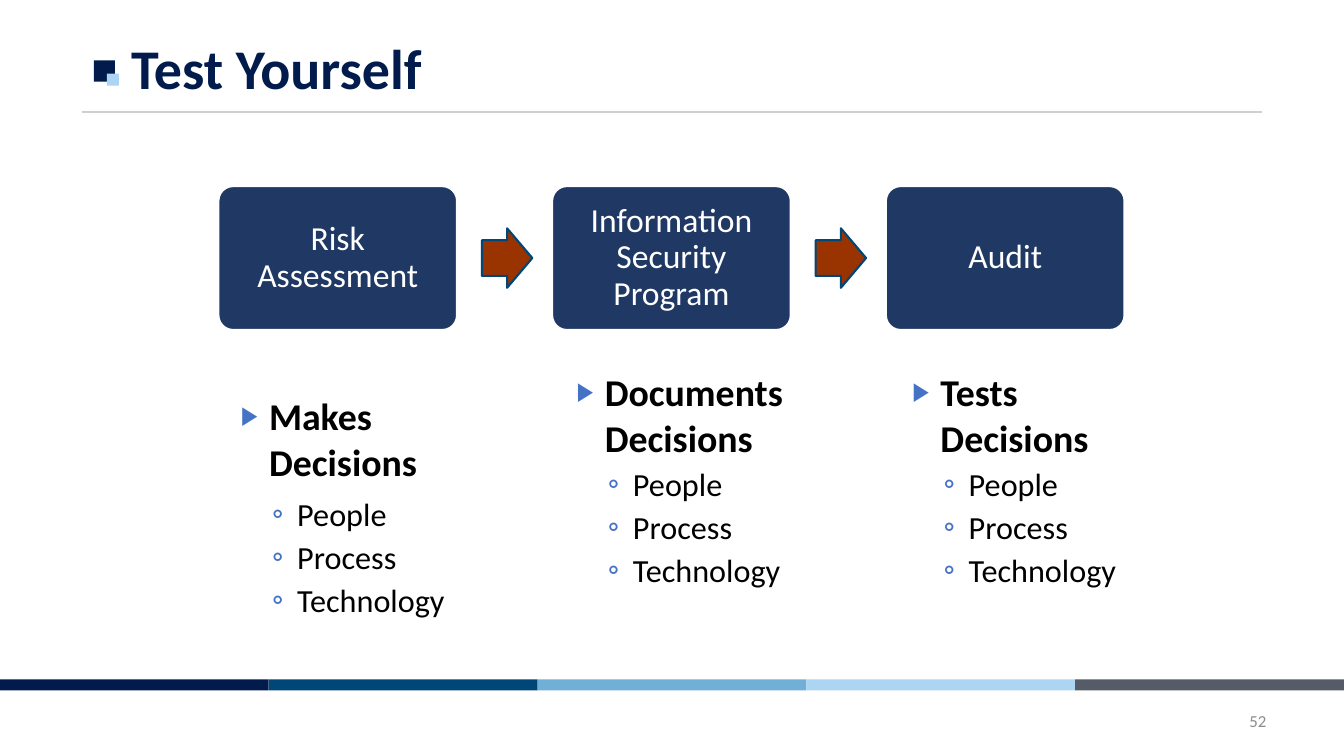
import pptx
import pptx.util
import pptx.dml.color
import pptx.enum.shapes
import pptx.enum.text
import pptx.oxml.ns
import lxml.etree

Inches = pptx.util.Inches
Pt = pptx.util.Pt
RGB = pptx.dml.color.RGBColor
SHAPE = pptx.enum.shapes.MSO_SHAPE
ALIGN = pptx.enum.text.PP_ALIGN
ANCHOR = pptx.enum.text.MSO_ANCHOR
qn = pptx.oxml.ns.qn

TITLE = "Test Yourself"
PAGE = "52"
ASPECTS = ["People", "Process", "Technology"]
STEPS = [
    {"name": "Risk Assessment", "action": "Makes\vDecisions", "top": 3.85, "after": 4},
    {"name": "Information Security Program", "action": "Documents\vDecisions", "top": 3.61, "after": 0},
    {"name": "Audit", "action": "Tests\vDecisions", "top": 3.61, "after": 0},
]

NAVY = RGB(0x00, 0x1B, 0x4C)
BLUE = RGB(0x00, 0x47, 0x78)
SKY = RGB(0x71, 0xAF, 0xD6)
PALE = RGB(0xAC, 0xD5, 0xF3)
SLATE = RGB(0x55, 0x5C, 0x67)
BOX = RGB(0x20, 0x38, 0x64)
RUST = RGB(0x99, 0x33, 0x00)
BULLET = RGB(0x44, 0x72, 0xC4)
RULE = RGB(0xD0, 0xCE, 0xCE)
GREY = RGB(0x8C, 0x8C, 0x8C)
WHITE = RGB(0xFF, 0xFF, 0xFF)
BLACK = RGB(0x00, 0x00, 0x00)
STRIPES = [NAVY, BLUE, SKY, PALE, SLATE]

SLIDE_W = 13.33
BOX_LEFT, BOX_TOP, BOX_W, BOX_H = 2.17, 1.85, 2.36, 1.42
BOX_STEP = 3.31
ARROW_W, ARROW_H, ARROW_OFFSET = 0.5, 0.59, 2.61
LIST_STEP, LIST_W, LIST_H = 3.33, 2.83, 2.4


def add_bullet(p, char, indent, hanging, percent):
    pPr = p._p.get_or_add_pPr()
    pPr.set("marL", str(Inches(indent)))
    pPr.set("indent", str(-Inches(hanging)))
    color = lxml.etree.SubElement(pPr, qn("a:buClr"))
    lxml.etree.SubElement(color, qn("a:srgbClr")).set("val", str(BULLET))
    lxml.etree.SubElement(pPr, qn("a:buSzPct")).set("val", str(percent * 1000))
    lxml.etree.SubElement(pPr, qn("a:buFont")).set("typeface", "Calibri")
    lxml.etree.SubElement(pPr, qn("a:buChar")).set("char", char)


def add_text(tf, text, size=24, color=BLACK, bold=False, align=ALIGN.LEFT,
             spacing=None, before=0, after=0, bullet=None, level=0):
    p = tf.paragraphs[0]
    if p.text:
        p = tf.add_paragraph()
    if bullet:
        add_bullet(p, *bullet)
    p.text = text
    p.level = level
    p.alignment = align
    p.line_spacing = spacing
    p.space_before = Pt(before)
    p.space_after = Pt(after)
    for r in p.runs:
        r.font.name = "Calibri"
        r.font.size = Pt(size)
        r.font.bold = bold
        r.font.color.rgb = color


def add_box(s, kind, left, top, width, height, fill, line=None, weight=1):
    sp = s.shapes.add_shape(kind, Inches(left), Inches(top), Inches(width), Inches(height))
    sp.shadow.inherit = False
    sp.fill.solid()
    sp.fill.fore_color.rgb = fill
    if line is None:
        sp.line.fill.background()
    else:
        sp.line.color.rgb = line
        sp.line.width = Pt(weight)
    return sp


def add_textbox(s, left, top, width, height):
    tf = s.shapes.add_textbox(Inches(left), Inches(top), Inches(width), Inches(height)).text_frame
    tf.word_wrap = True
    return tf


def add_frame(s):
    stripe_w = SLIDE_W / len(STRIPES)
    for i, color in enumerate(STRIPES):
        add_box(s, SHAPE.RECTANGLE, i * stripe_w, 6.74, stripe_w, 0.11, color)
    rule = s.shapes.add_connector(pptx.enum.shapes.MSO_CONNECTOR.STRAIGHT,
                                  Inches(0.81), Inches(1.11), Inches(12.52), Inches(1.11))
    rule.line.color.rgb = RULE
    rule.line.width = Pt(1.5)
    lxml.etree.SubElement(rule._element.spPr, qn("a:effectLst"))
    add_box(s, SHAPE.RECTANGLE, 0.93, 0.6, 0.21, 0.21, NAVY)
    add_box(s, SHAPE.RECTANGLE, 1.06, 0.73, 0.12, 0.12, PALE)

    title = s.shapes.title
    title.left, title.top = Inches(1.2), Inches(0.31)
    title.width, title.height = Inches(9.99), Inches(0.79)
    title.text_frame.vertical_anchor = ANCHOR.MIDDLE
    add_text(title.text_frame, TITLE, size=40, color=NAVY, bold=True, spacing=0.9)

    tf = add_textbox(s, 9.66, 6.95, 3, 0.4)
    tf.vertical_anchor = ANCHOR.MIDDLE
    add_text(tf, PAGE, size=12, color=GREY, align=ALIGN.RIGHT)


def add_step(s, i, step):
    left = BOX_LEFT + i * BOX_STEP
    box = add_box(s, SHAPE.ROUNDED_RECTANGLE, left, BOX_TOP, BOX_W, BOX_H, BOX, WHITE)
    box.adjustments[0] = 0.1
    tf = box.text_frame
    tf.word_wrap = True
    tf.vertical_anchor = ANCHOR.MIDDLE
    tf.margin_left = tf.margin_right = tf.margin_top = tf.margin_bottom = Inches(0.1)
    add_text(tf, step["name"], color=WHITE, align=ALIGN.CENTER, spacing=0.9)

    if i < len(STEPS) - 1:
        arrow_top = BOX_TOP + (BOX_H - ARROW_H) / 2
        arrow = add_box(s, SHAPE.RIGHT_ARROW, left + ARROW_OFFSET, arrow_top,
                        ARROW_W, ARROW_H, RUST, BLUE, 1.5)
        arrow.adjustments[0] = 0.6
        arrow.adjustments[1] = 0.5

    tf = add_textbox(s, BOX_LEFT + i * LIST_STEP, step["top"], LIST_W, LIST_H)
    add_text(tf, step["action"], size=27, bold=True, after=step["after"],
             bullet=("▶", 0.4, 0.28, 68))
    for aspect in ASPECTS:
        add_text(tf, aspect, size=23, before=3.2, bullet=("◦", 0.68, 0.25, 100), level=1)


def main():
    prs = pptx.Presentation()
    prs.slide_width = Inches(SLIDE_W)
    prs.slide_height = Inches(7.5)
    s = prs.slides.add_slide(prs.slide_layouts[5])
    add_frame(s)
    for i, step in enumerate(STEPS):
        add_step(s, i, step)
    prs.save("out.pptx")


if __name__ == "__main__":
    main()
